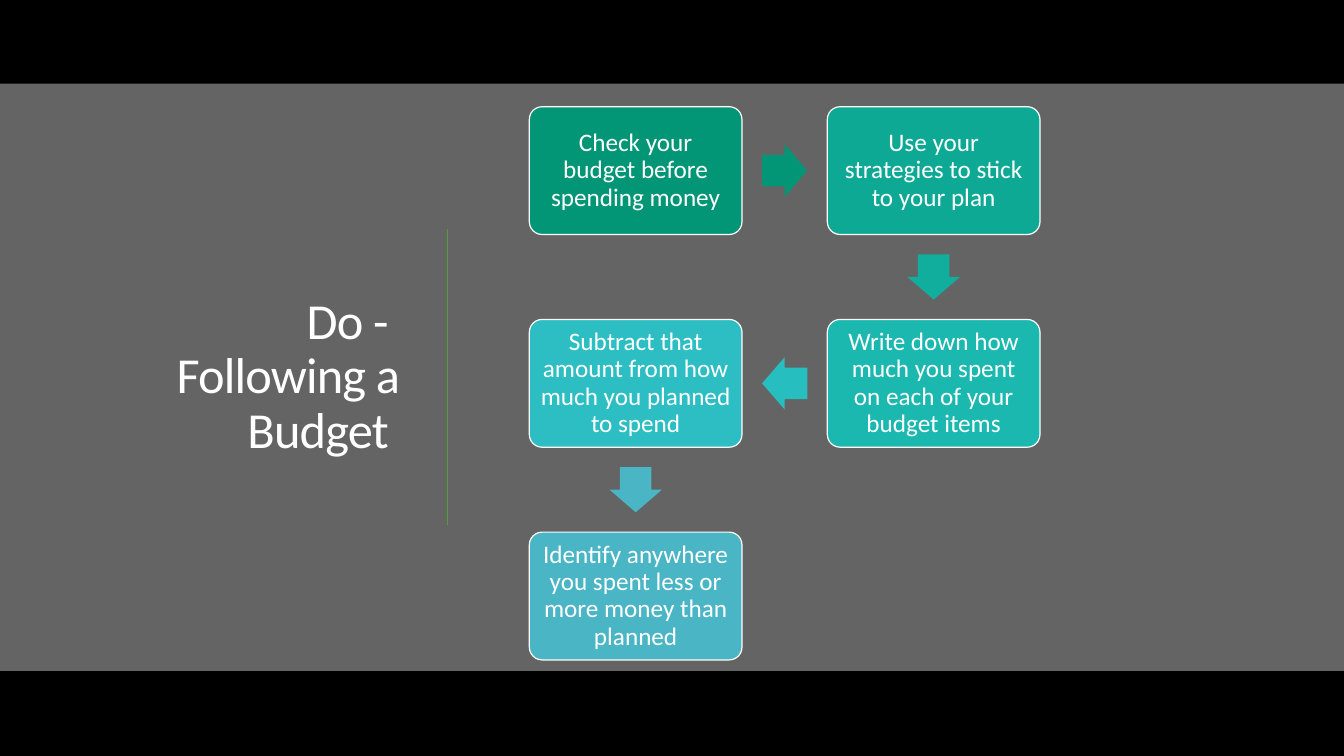
from lxml import etree
from pptx import Presentation
from pptx.dml.color import RGBColor
from pptx.enum.shapes import MSO_CONNECTOR, MSO_SHAPE
from pptx.enum.text import MSO_ANCHOR, PP_ALIGN
from pptx.oxml.ns import qn
from pptx.util import Cm, Pt

RECT = MSO_SHAPE.RECTANGLE
ROUND = MSO_SHAPE.ROUNDED_RECTANGLE
ARROW = MSO_SHAPE.RIGHT_ARROW
LINE = MSO_CONNECTOR.STRAIGHT
MIDDLE = MSO_ANCHOR.MIDDLE
CENTER = PP_ALIGN.CENTER
RIGHT = PP_ALIGN.RIGHT

BLACK = RGBColor(0x00, 0x00, 0x00)
WHITE = RGBColor(0xFF, 0xFF, 0xFF)
GRAY = RGBColor(0xC8, 0xC8, 0xC8)
GREEN = RGBColor(0x54, 0x9E, 0x39)
STEP_FILLS = [
    RGBColor(0x02, 0x96, 0x76),
    RGBColor(0x0D, 0xA9, 0x94),
    RGBColor(0x1B, 0xB8, 0xB0),
    RGBColor(0x2D, 0xBE, 0xC3),
    RGBColor(0x4A, 0xB5, 0xC4),
]
ARROW_FILLS = [
    RGBColor(0x02, 0x96, 0x76),
    RGBColor(0x11, 0xAE, 0x9E),
    RGBColor(0x27, 0xBE, 0xC0),
    RGBColor(0x4A, 0xB5, 0xC4),
]

FONT = "Calibri"
STEPS = [
    ("Check your budget before spending money", 0, 0),
    ("Use your strategies to stick to your plan", 1, 0),
    ("Write down how much you spent on each of your budget items", 1, 1),
    ("Subtract that amount from how much you planned to spend", 0, 1),
    ("Identify anywhere you spent less or more money than planned", 0, 2),
]
TURNS = {(1, 0): 0, (0, 1): 90, (-1, 0): 180}


def add_solid(slide, kind, box, fill):
    shape = slide.shapes.add_shape(kind, *[Cm(n) for n in box])
    shape.shadow.inherit = False
    shape.fill.solid()
    shape.fill.fore_color.rgb = fill
    shape.line.fill.background()
    return shape


def set_text(frame, text, size, align):
    frame.word_wrap = True
    frame.vertical_anchor = MIDDLE
    frame.text = text
    para = frame.paragraphs[0]
    para.alignment = align
    para.line_spacing = 0.9
    for run in para.runs:
        run.font.name = FONT
        run.font.size = Pt(size)
        run.font.color.rgb = WHITE


def add_band(slide, box):
    band = add_solid(slide, RECT, box, GRAY)
    color = band.fill._xPr.find(qn("a:solidFill"))[0]
    etree.SubElement(color, qn("a:alpha")).set("val", "50000")


def add_title(slide, box):
    left, top, width, height = box
    title = slide.shapes.add_textbox(*[Cm(n) for n in box])
    set_text(title.text_frame, "Do - \vFollowing a Budget ", 36, RIGHT)
    for run in title.text_frame.paragraphs[0].runs:
        run._r.get_or_add_rPr().set("spc", "-60")

    rule_x = Cm(left + width + 0.96)
    middle = top + height / 2
    rule = slide.shapes.add_connector(
        LINE, rule_x, Cm(middle - 3.73), rule_x, Cm(middle + 3.73))
    rule.line.color.rgb = GREEN
    rule.line.width = Pt(1)
    etree.SubElement(rule._element.spPr, qn("a:effectLst"))


def add_step(slide, box, text, fill):
    step = add_solid(slide, ROUND, box, fill)
    step.adjustments[0] = 0.1
    step.line.color.rgb = WHITE
    step.line.width = Pt(0.85)
    frame = step.text_frame
    frame.margin_left = frame.margin_right = Cm(0.18)
    frame.margin_top = frame.margin_bottom = Cm(0.18)
    set_text(frame, text, 18, CENTER)


def add_flow(slide, box):
    left, top, width, height = box
    step_w, step_h = 5.36, 3.22
    pitch_x = width - step_w
    pitch_y = (height - step_h) / 2
    arrow_w, arrow_h = 1.14, 1.32

    spots = [(left + col * pitch_x, top + row * pitch_y)
             for _, col, row in STEPS]
    for (text, _, _), (x, y), fill in zip(STEPS, spots, STEP_FILLS):
        add_step(slide, (x, y, step_w, step_h), text, fill)

    for i, fill in enumerate(ARROW_FILLS):
        (x1, y1), (x2, y2) = spots[i:i + 2]
        mid_x = (x1 + x2 + step_w) / 2
        mid_y = (y1 + y2 + step_h) / 2
        arrow = add_solid(
            slide, ARROW,
            (mid_x - arrow_w / 2, mid_y - arrow_h / 2, arrow_w, arrow_h),
            fill)
        arrow.adjustments[0] = 0.6
        arrow.adjustments[1] = 0.5
        _, col, row = STEPS[i]
        _, next_col, next_row = STEPS[i + 1]
        arrow.rotation = TURNS[next_col - col, next_row - row]


def main():
    deck = Presentation()
    deck.slide_width = Cm(33.87)
    deck.slide_height = Cm(19.05)
    slide = deck.slides.add_slide(deck.slide_layouts[6])
    slide.background.fill.solid()
    slide.background.fill.fore_color.rgb = BLACK
    add_band(slide, (0, 2.11, 33.87, 14.8))
    add_title(slide, (1.78, 3.12, 8.53, 12.78))
    add_flow(slide, (13.34, 2.69, 12.87, 13.94))
    deck.save("out.pptx")


if __name__ == "__main__":
    main()
